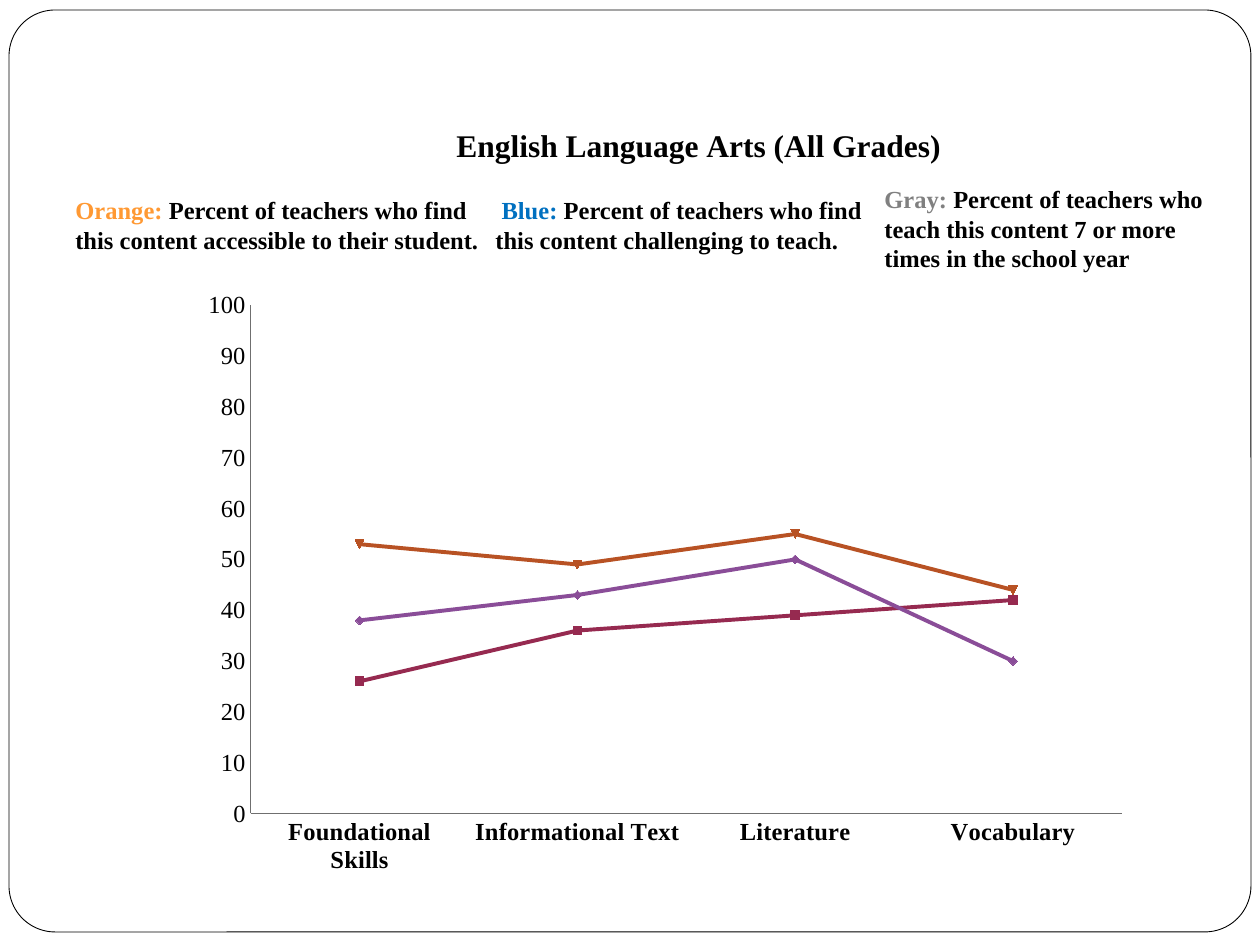
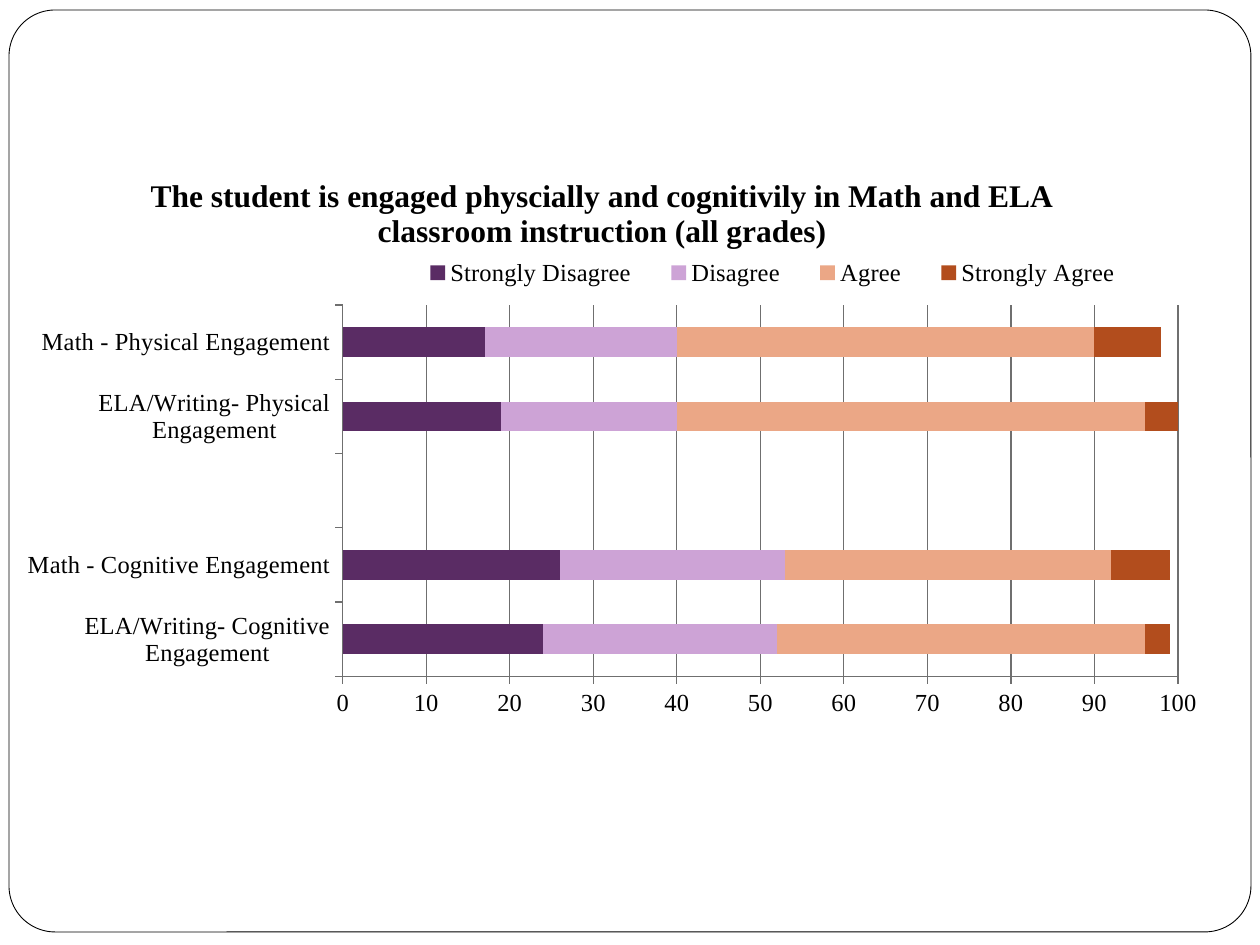
import pptx
import pptx.util
import pptx.chart.data
import pptx.dml.color
import pptx.enum.chart
import pptx.enum.shapes
import pptx.oxml
from pptx.oxml.ns import nsdecls, qn

SCALE = 914400 / 126
FONT = "Times New Roman"
INK = {
    "black": "000000", "white": "FFFFFF", "axis": "6F6F6F",
    "orange": "FF9933", "blue": "0070C0", "gray": "808080",
    "wine": "962A50", "violet": "8A4D98", "rust": "B85224",
    "plum": "5A2C64", "lilac": "CDA3D6", "peach": "EBA786", "brick": "B24D1D",
}
KIND = pptx.enum.chart.XL_CHART_TYPE
TICK = pptx.enum.chart.XL_TICK_MARK


def style(font, size, color="black", bold=False):
    form = {"name": FONT, "size": pptx.util.Pt(size), "bold": bold}
    for key, value in form.items():
        setattr(font, key, value)
    font.color.rgb = pptx.dml.color.RGBColor.from_string(INK[color])


def place(node, index, **spots):
    """Give a chart part a fixed layout, in fractions of the chart."""
    old = node.find(qn("c:layout"))
    if old is not None:
        node.remove(old)
    inner = '<c:layoutTarget val="inner"/>' if index == 0 else ""
    modes = "".join(f'<c:{key}Mode val="edge"/>' for key in "xy")
    sizes = "".join(f'<c:{key} val="{value}"/>' for key, value in spots.items())
    node.insert(index, pptx.oxml.parse_xml(
        f'<c:layout {nsdecls("c")}><c:manualLayout>{inner}{modes}{sizes}'
        '</c:manualLayout></c:layout>'))


pages = [
    {
        "kind": KIND.LINE_MARKERS,
        "box": (94, 105, 1081, 777),
        "title": "English Language Arts (All Grades)",
        "spot": {"x": 0.33, "y": 0.02},
        "plot": {"x": 0.145, "y": 0.258, "w": 0.806, "h": 0.654},
        "tick": TICK.NONE, "grid": False, "bold": True,
        "cats": ["Foundational Skills", "Informational Text", "Literature", "Vocabulary"],
        "rows": [
            ("Series 1", "wine", [26, 36, 39, 42]),
            ("Series 2", "violet", [38, 43, 50, 30]),
            ("Series 3", "rust", [53, 49, 55, 44]),
        ],
        "notes": [
            ((483, 189, 410, 105), " Blue: ", "blue",
             "Percent of teachers who find this content challenging to teach."),
            ((63, 189, 441, 91), "Orange: ", "orange",
             "Percent of teachers who find this content accessible to their student."),
            ((872, 178, 357, 170), "Gray: ", "gray",
             "Percent of teachers who teach this content 7 or more times in the school year"),
        ],
    },
    {
        "kind": KIND.BAR_STACKED,
        "box": (0, 147, 1207, 599),
        "title": "The student is engaged physcially and cognitivily in Math and ELA "
                 "classroom instruction (all grades)",
        "spot": {"x": 0.12, "y": 0.04},
        "plot": {"x": 0.284, "y": 0.264, "w": 0.692, "h": 0.62},
        "tick": TICK.OUTSIDE, "grid": True, "bold": False,
        "cats": ["ELA/Writing- Cognitive Engagement", "Math - Cognitive Engagement", "",
                 "ELA/Writing- Physical Engagement", "Math - Physical Engagement"],
        "rows": [
            ("Strongly Disagree", "plum", [24, 26, None, 19, 17]),
            ("Disagree", "lilac", [28, 27, None, 21, 23]),
            ("Agree", "peach", [44, 39, None, 56, 50]),
            ("Strongly Agree", "brick", [3, 7, None, 4, 8]),
        ],
        "notes": [],
    },
]

deck = pptx.Presentation()
deck.slide_width = pptx.util.Inches(10)
deck.slide_height = pptx.util.Inches(7.5)

for page in pages:
    slide = deck.slides.add_slide(deck.slide_layouts[6])
    frame = slide.shapes.add_shape(
        pptx.enum.shapes.MSO_SHAPE.ROUNDED_RECTANGLE,
        *[round(n * SCALE) for n in (9, 10, 1242, 922)])
    frame.adjustments[0] = 0.05
    frame.shadow.inherit = False
    frame.fill.solid()
    frame.fill.fore_color.rgb = pptx.dml.color.RGBColor.from_string(INK["white"])
    frame.line.color.rgb = pptx.dml.color.RGBColor.from_string(INK["black"])
    frame.line.width = pptx.util.Pt(0.5)

    data = pptx.chart.data.CategoryChartData()
    data.categories = page["cats"]
    for name, color, values in page["rows"]:
        data.add_series(name, values)
    chart = slide.shapes.add_chart(
        page["kind"], *[round(n * SCALE) for n in page["box"]], data).chart
    style(chart.font, 10)
    chart.has_title = True
    title = chart.chart_title
    title.include_in_layout = False
    title.text_frame.text = page["title"]
    style(title.text_frame.paragraphs[0].runs[0].font, 18, bold=True)
    place(title._element, 1, **page["spot"])
    place(chart._chartSpace.chart.plotArea, 0, **page["plot"])

    for axis, bold in ((chart.category_axis, page["bold"]), (chart.value_axis, False)):
        style(axis.tick_labels.font, 14, bold=bold)
        axis.major_tick_mark = page["tick"]
        axis.minor_tick_mark = TICK.NONE
        axis.has_major_gridlines = False
        axis.format.line.color.rgb = pptx.dml.color.RGBColor.from_string(INK["axis"])
        axis.format.line.width = pptx.util.Pt(0.75)
    scale = {"minimum_scale": 0, "maximum_scale": 100, "major_unit": 10,
             "has_major_gridlines": page["grid"]}
    for key, value in scale.items():
        setattr(chart.value_axis, key, value)
    if page["grid"]:
        line = chart.value_axis.major_gridlines.format.line
        line.color.rgb = pptx.dml.color.RGBColor.from_string(INK["axis"])
        line.width = pptx.util.Pt(0.75)

    plot = chart.plots[0]
    plot.vary_by_categories = False
    for series, (name, color, values) in zip(plot.series, page["rows"]):
        tone = pptx.dml.color.RGBColor.from_string(INK[color])
        if page["kind"] == KIND.LINE_MARKERS:
            series.smooth = False
            series.format.line.color.rgb = tone
            series.format.line.width = pptx.util.Pt(2.25)
            series.marker.size = 5
        else:
            series.format.fill.solid()
            series.format.fill.fore_color.rgb = tone

    chart.has_legend = page["kind"] == KIND.BAR_STACKED
    if chart.has_legend:
        plot.gap_width, plot.overlap = 150, 100
        chart.legend.position = pptx.enum.chart.XL_LEGEND_POSITION.TOP
        chart.legend.include_in_layout = False
        style(chart.legend.font, 14)
        place(chart.legend._element, 1, x=0.33, y=0.17, w=0.62, h=0.08)

    for box, label, color, text in page["notes"]:
        note = slide.shapes.add_textbox(*[round(n * SCALE) for n in box]).text_frame
        note.word_wrap = True
        for words, tint in ((label, color), (text, "black")):
            run = note.paragraphs[0].add_run()
            run.text = words
            style(run.font, 14, tint, True)

deck.save("out.pptx")
